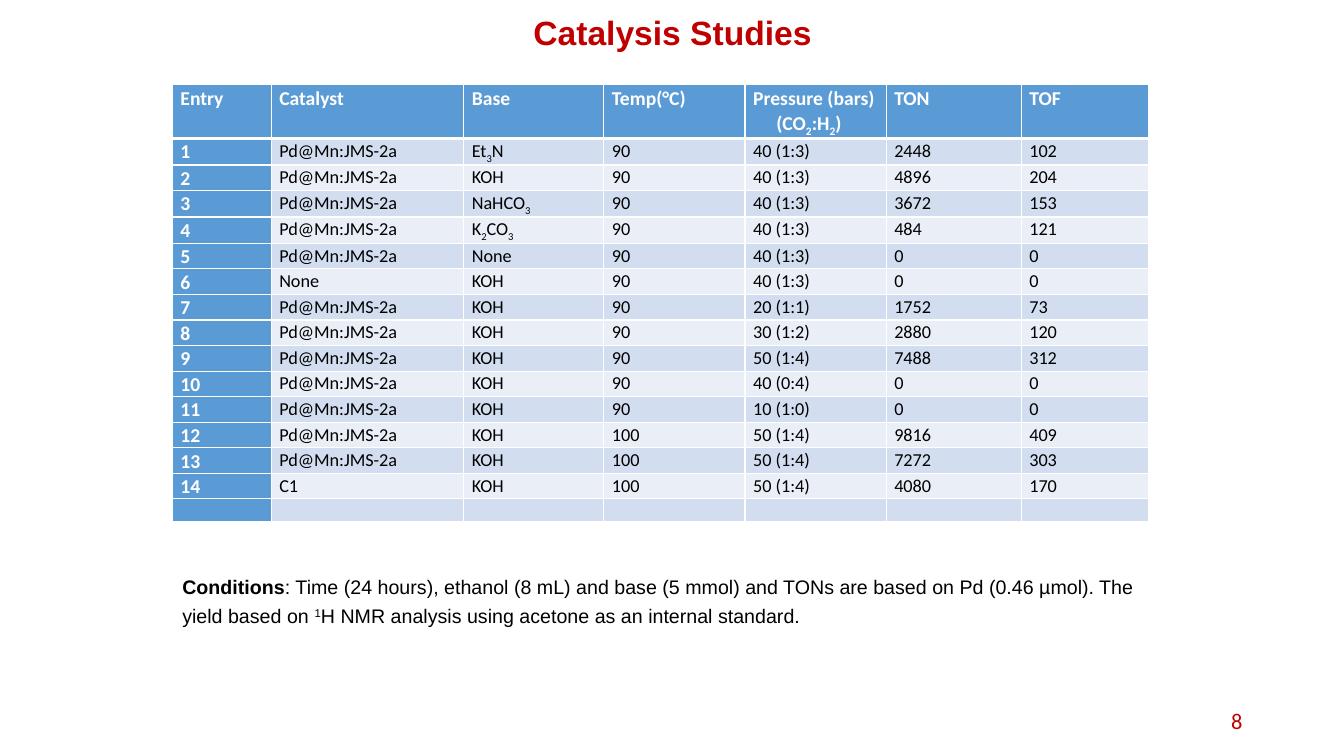
from lxml import etree
from pptx import Presentation
from pptx.dml.color import RGBColor
from pptx.enum.text import MSO_ANCHOR, PP_ALIGN
from pptx.oxml.ns import qn
from pptx.util import Inches, Pt

LEFT, CENTER, RIGHT = PP_ALIGN.LEFT, PP_ALIGN.CENTER, PP_ALIGN.RIGHT
TOP, MIDDLE = MSO_ANCHOR.TOP, MSO_ANCHOR.MIDDLE
HUES = {"head": "5B9BD5", "odd": "D2DEEF", "even": "EAEFF7",
        "white": "FFFFFF", "black": "000000", "red": "C00000"}
HEAD = {"name": "Calibri", "size": Pt(14), "bold": True, "hue": "white"}
BODY = {"name": "Calibri", "size": Pt(13), "bold": False, "hue": "black"}
NOTE = {"name": "Arial", "size": Pt(14), "bold": False, "hue": "black"}
TITLE = {"name": "Arial", "size": Pt(24), "bold": True, "hue": "red"}
PAGE = {"name": "Calibri", "size": Pt(16), "bold": False, "hue": "red"}


def write(para, text, form, shift=-25):
    """Add runs to a paragraph; parts between ~ marks are shifted off the baseline."""
    for i, part in enumerate(text.split("~")):
        if not part:
            continue
        run = para.add_run()
        run.text = part
        for key, value in form.items():
            if key != "hue":
                setattr(run.font, key, value)
        run.font.color.rgb = RGBColor.from_string(HUES[form["hue"]])
        if i % 2:
            run.font._element.set("baseline", str(shift * 1000))


def add_text(left, top, width, height, align, anchor):
    box = slide.shapes.add_textbox(*map(Inches, (left, top, width, height)))
    frame = box.text_frame
    frame.word_wrap = True
    frame.vertical_anchor = anchor
    para = frame.paragraphs[0]
    para.alignment = align
    return para


prs = Presentation()
prs.slide_width, prs.slide_height = Inches(13.33), Inches(7.5)
slide = prs.slides.add_slide(prs.slide_layouts[6])

# Table of runs
titles = ["Entry", "Catalyst", "Base", "Temp(°C)", "Pressure (bars) (CO~2~:H~2~)", "TON", "TOF"]
PD = "Pd@Mn:JMS-2a"
tests = [
    (PD, "Et~3~N", 90, "40 (1:3)", 2448, 102),
    (PD, "KOH", 90, "40 (1:3)", 4896, 204),
    (PD, "NaHCO~3~", 90, "40 (1:3)", 3672, 153),
    (PD, "K~2~CO~3~", 90, "40 (1:3)", 484, 121),
    (PD, "None", 90, "40 (1:3)", 0, 0),
    ("None", "KOH", 90, "40 (1:3)", 0, 0),
    (PD, "KOH", 90, "20 (1:1)", 1752, 73),
    (PD, "KOH", 90, "30 (1:2)", 2880, 120),
    (PD, "KOH", 90, "50 (1:4)", 7488, 312),
    (PD, "KOH", 90, "40 (0:4)", 0, 0),
    (PD, "KOH", 90, "10 (1:0)", 0, 0),
    (PD, "KOH", 100, "50 (1:4)", 9816, 409),
    (PD, "KOH", 100, "50 (1:4)", 7272, 303),
    ("C1", "KOH", 100, "50 (1:4)", 4080, 170),
]
rows = [titles] + [(n, *test) for n, test in enumerate(tests, 1)] + [[""] * len(titles)]
widths = [0.98, 1.91, 1.39, 1.4, 1.4, 1.34, 1.26]
heights = [0.44] + [0.22] * (len(rows) - 1)
table = slide.shapes.add_table(len(rows), len(widths), Inches(1.71), Inches(0.84),
                               Inches(sum(widths)), Inches(sum(heights))).table
table.first_row = table.horz_banding = False
for col, width in zip(table.columns, widths):
    col.width = Inches(width)

for r, row in enumerate(rows):
    table.rows[r].height = Inches(heights[r])
    for c, value in enumerate(row):
        cell = table.cell(r, c)
        cell.margin_left = cell.margin_right = Inches(0.08)
        cell.margin_top = cell.margin_bottom = 0
        lead = r == 0 or c == 0
        props = cell._tc.get_or_add_tcPr()
        for side in "LRTB":
            thick = (r, side) in ((0, "B"), (1, "T"))
            line = etree.SubElement(props, qn("a:ln" + side), w=str(Pt(3 if thick else 1)))
            paint = etree.SubElement(line, qn("a:solidFill"))
            etree.SubElement(paint, qn("a:srgbClr"), val=HUES["white"])
        cell.fill.solid()
        hue = "head" if lead else "odd" if r % 2 else "even"
        cell.fill.fore_color.rgb = RGBColor.from_string(HUES[hue])
        para = cell.text_frame.paragraphs[0]
        para.line_spacing = 1.07
        para.space_after = Pt(8)
        if value == "":
            etree.SubElement(para._p, qn("a:endParaRPr"), sz="1300")
        write(para, str(value), HEAD if lead else BODY)

# Hanging indent sets the wrapped gas ratio in from the left
ratio = table.cell(0, 4).text_frame.paragraphs[0]._p.get_or_add_pPr()
ratio.set("marL", str(Inches(0.23)))
ratio.set("indent", str(-Inches(0.23)))

# Title, conditions and page number
title = add_text(0.92, 0.11, 11.5, 0.56, CENTER, TOP)
title.line_spacing = 0.9
write(title, "Catalysis Studies", TITLE)

note = add_text(1.71, 5.65, 9.67, 0.64, LEFT, TOP)
write(note, "Conditions", NOTE | {"bold": True})
write(note, ": Time (24 hours), ethanol (8 mL) and base (5 mmol) and TONs are based on "
      "Pd (0.46 µmol). The yield based on ~1~H NMR analysis using acetone as an "
      "internal standard.", NOTE, 30)
write(note, " ", NOTE | {"size": Pt(18)})

write(add_text(9.42, 6.95, 3, 0.4, RIGHT, MIDDLE), "8", PAGE)

prs.save("out.pptx")
